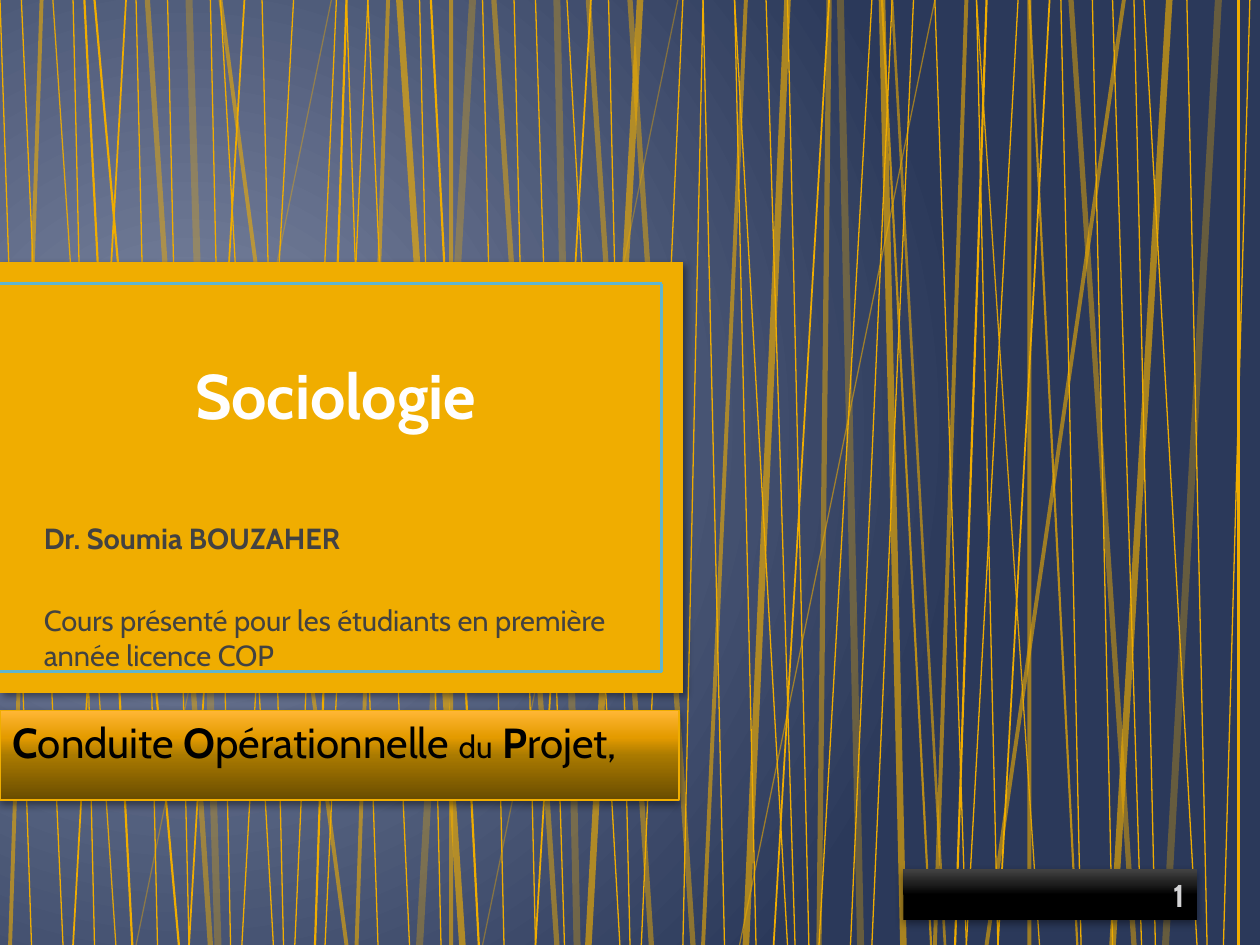
from lxml.etree import SubElement
from pptx import Presentation
from pptx.dml.color import RGBColor
from pptx.enum.shapes import MSO_CONNECTOR, MSO_SHAPE
from pptx.enum.text import MSO_ANCHOR, PP_ALIGN
from pptx.oxml.ns import qn
from pptx.util import Inches, Pt

WIDTH, HEIGHT = 10, 7.5
FONT = "Cabin"
GOLD, BLUE = "F0AD00", "60B5CC"
WHITE, BLACK, GRAY, SILVER = "FFFEFE", "000000", "424242", "D4D4D6"

STRANDS = {
    (4, 30): [(1.5, 1.73), (3.75, 3.33), (4.42, 4.58), (6.67, 6.83), (9.67, 9.25)],
    (0.75, 39): [(2.63, 1.08), (5.38, 3.83)],
    (3, 47): [(1.17, 1.67), (3.92, 4.42), (4.67, 5.17), (8.5, 9), (6.58, 6.5), (5, 5.5)],
    (0.75, 56): [(7.42, 5.87)],
    (1.5, 58): [(7.08, 7.5)],
    (2.25, 58): [
        (0.33, 0.08), (1.75, 2.75), (3.08, 2.83), (3.58, 3.58),
        (5.92, 5.58), (7.67, 7.42), (8.17, 8.17), (8.92, 7.83),
    ],
    (3.75, 63): [
        (5.08, 4.67), (3.17, 3.67), (9.28, 8.83), (7, 7.17), (6.25, 5.92),
    ],
    (1.25, 72): [(8.17, 8.55), (7, 7.39)],
    (0.75, 90): [(0.42, 0.92), (7.75, 8.25)],
    (0.75, 100): [
        (2.08, 2.25), (1.75, 2.17), (2.33, 1.92), (0, 0.25), (0.17, 0.5),
        (1.67, 1.83), (0.58, 0.75), (2.67, 2.34), (2.92, 2.58), (1.08, 1.25),
        (1.33, 1.5), (4.83, 5), (4.5, 4.92), (2.75, 3), (2.92, 3.25),
        (3.33, 3.5), (5.42, 5.09), (5.58, 5.42), (4.25, 4.48), (3.83, 4),
        (4.08, 4.25), (5.83, 6.25), (6.92, 6.5), (6.25, 6.42), (7.25, 6.92),
        (7.08, 6.75), (6.08, 6.31), (5.58, 5.75), (5.83, 6), (7.42, 7.67),
        (7.75, 7.92), (8.42, 8.58), (8.67, 8.83), (9.42, 9.58), (9.08, 9.5),
        (9, 9.17), (9.92, 9.71), (8.83, 9.06), (8.08, 7.67),
    ],
    (1, 100): [(1, 0.58), (1.94, 1.5), (4.69, 4.25), (6.58, 6.14), (8.33, 7.92)],
    (1.25, 100): [
        (0.75, 1.42), (0.67, 1.05), (2.75, 2.5), (3.42, 3.8), (7.83, 7.58), (9.83, 9.83),
    ],
}


def color(hex_value):
    return RGBColor.from_string(hex_value)


def set_gradient(fill, owner, stops):
    fill.gradient()
    gradient = owner.find(".//" + qn("a:gradFill"))
    for child in list(gradient):
        gradient.remove(child)
    stop_list = SubElement(gradient, qn("a:gsLst"))
    for position, hex_value in stops:
        stop = SubElement(stop_list, qn("a:gs"), pos=str(position * 1000))
        SubElement(stop, qn("a:srgbClr"), val=hex_value)
    return gradient


def paint_background(slide):
    stops = [(0, "7E88A3"), (100, "2B395A")]
    gradient = set_gradient(slide.background.fill, slide.element, stops)
    circle = SubElement(gradient, qn("a:path"), path="circle")
    SubElement(circle, qn("a:fillToRect"), l="15000", t="50000", r="85000", b="60000")


def add_line(slide, start, end, hex_value, width, opacity=100):
    points = [Inches(value) for value in (*start, *end)]
    line = slide.shapes.add_connector(MSO_CONNECTOR.STRAIGHT, *points)
    line.line.color.rgb = color(hex_value)
    line.line.width = Pt(width)
    properties = line.element.spPr
    if opacity < 100:
        tint = properties.find(".//" + qn("a:srgbClr"))
        SubElement(tint, qn("a:alpha"), val=str(opacity * 1000))
    SubElement(properties, qn("a:effectLst"))


def add_shadow(shape, opacity, blur, distance, angle):
    shape.shadow.inherit = False
    effects = shape.element.spPr.find(qn("a:effectLst"))
    shadow = SubElement(
        effects, qn("a:outerShdw"), blurRad=str(Pt(blur)), dist=str(Pt(distance)),
        dir=str(angle * 60000), algn="tl", rotWithShape="0",
    )
    tint = SubElement(shadow, qn("a:srgbClr"), val=BLACK)
    SubElement(tint, qn("a:alpha"), val=str(opacity * 1000))


def add_bar(slide, box, stops, outline=None):
    bar = slide.shapes.add_shape(MSO_SHAPE.RECTANGLE, *map(Inches, box))
    gradient = set_gradient(bar.fill, bar.element.spPr, stops)
    SubElement(gradient, qn("a:lin"), ang=str(270 * 60000), scaled="0")
    if outline:
        bar.line.color.rgb = color(outline)
        bar.line.width = Pt(0.75)
    else:
        bar.line.fill.background()
    add_shadow(bar, 43, 5, 2, 90)
    return bar


def add_text_box(slide, box):
    shape = slide.shapes.add_textbox(*map(Inches, box))
    shape.text_frame.word_wrap = True
    return shape.text_frame


def style_paragraph(paragraph, size, hex_value, bold=None, align=PP_ALIGN.LEFT):
    paragraph.alignment = align
    paragraph.font.name = FONT
    paragraph.font.size = Pt(size)
    paragraph.font.bold = bold
    paragraph.font.color.rgb = color(hex_value)


def add_panel(slide):
    panel = slide.shapes.add_shape(
        MSO_SHAPE.RECTANGLE, 0, Inches(2.08), Inches(5.42), Inches(3.42)
    )
    panel.fill.solid()
    panel.fill.fore_color.rgb = color(GOLD)
    panel.line.fill.background()
    add_shadow(panel, 40, 4, 3, 45)
    corners = [(0, 2.25), (5.25, 2.25), (5.25, 5.33), (0, 5.33)]
    for start, end in zip(corners, corners[1:]):
        add_line(slide, start, end, BLUE, 1.5)


def add_title(slide):
    frame = add_text_box(slide, (0.25, 2.33, 4.83, 1.75))
    frame.vertical_anchor = MSO_ANCHOR.BOTTOM
    frame.margin_bottom = Inches(0.65)
    paragraph = frame.paragraphs[0]
    paragraph.text = "Sociologie"
    style_paragraph(paragraph, 36, WHITE, True, PP_ALIGN.CENTER)


def add_subtitle(slide):
    frame = add_text_box(slide, (0.25, 4.08, 4.83, 1.17))
    author = frame.paragraphs[0]
    author.text = "Dr. Soumia BOUZAHER"
    style_paragraph(author, 16.6, GRAY, True)
    audience = frame.add_paragraph()
    audience.text = "Cours présenté pour les étudiants en première année licence COP"
    audience.space_before = Pt(27)
    style_paragraph(audience, 16.6, GRAY)


def add_banner(slide):
    stops = [(0, "694C00"), (50, "AA7A00"), (70, "E49B00"), (100, "FFB634")]
    banner = add_bar(slide, (0, 5.64, 5.39, 0.71), stops, GOLD)
    frame = banner.text_frame
    frame.vertical_anchor = MSO_ANCHOR.TOP
    paragraph = frame.paragraphs[0]
    style_paragraph(paragraph, 24, BLACK)
    pieces = [
        ("C", True, 24), ("onduite ", False, 24), ("O", True, 24),
        ("pérationnelle ", False, 24), ("du", False, 18), (" ", False, 24),
        ("P", True, 24), ("rojet,", False, 24),
    ]
    for text, bold, size in pieces:
        run = paragraph.add_run()
        run.text = text
        run.font.bold = bold
        run.font.size = Pt(size)


def add_slide_number(slide):
    stops = [(0, BLACK), (50, BLACK), (70, "1D1D1D"), (100, GRAY)]
    frame = add_bar(slide, (7.17, 6.9, 2.33, 0.4), stops).text_frame
    frame.vertical_anchor = MSO_ANCHOR.MIDDLE
    paragraph = frame.paragraphs[0]
    paragraph.text = "1"
    style_paragraph(paragraph, 18, SILVER, True, PP_ALIGN.RIGHT)


def main():
    presentation = Presentation()
    presentation.slide_width = Inches(WIDTH)
    presentation.slide_height = Inches(HEIGHT)
    slide = presentation.slides.add_slide(presentation.slide_layouts[6])
    paint_background(slide)
    for (width, opacity), strands in STRANDS.items():
        for top, bottom in strands:
            add_line(slide, (top, 0), (bottom, HEIGHT), GOLD, width, opacity)
    add_panel(slide)
    add_title(slide)
    add_subtitle(slide)
    add_banner(slide)
    add_slide_number(slide)
    presentation.save("out.pptx")


if __name__ == "__main__":
    main()
